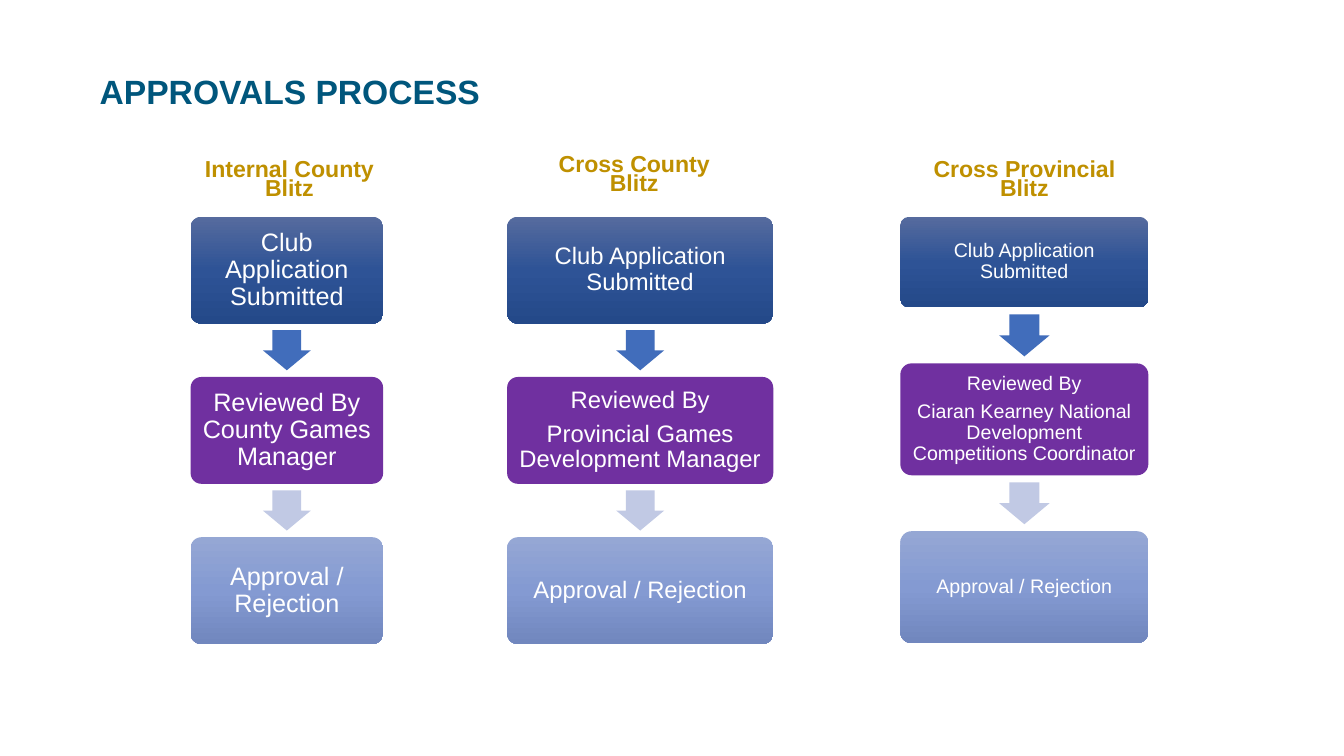
import copy
import pptx
import pptx.util
import pptx.dml.color
import pptx.enum.shapes
import pptx.enum.text
import pptx.oxml.ns

Inches, Pt = pptx.util.Inches, pptx.util.Pt
SHAPE = pptx.enum.shapes.MSO_SHAPE
ALIGN = pptx.enum.text.PP_ALIGN


def paint(color, value):
    color.rgb = pptx.dml.color.RGBColor.from_string(value)


def write(sp, paragraphs, size, color, bold=False, align=ALIGN.CENTER,
          spacing=0.9, insets=(0.1, 0.05, 0.1, 0.05)):
    tf = sp.text_frame
    tf.word_wrap = True
    tf.vertical_anchor = pptx.enum.text.MSO_ANCHOR.MIDDLE
    tf.margin_left, tf.margin_top, tf.margin_right, tf.margin_bottom = map(Inches, insets)
    for i, text in enumerate(paragraphs):
        p = tf.add_paragraph() if i else tf.paragraphs[0]
        p.alignment, p.line_spacing = align, spacing
        if i:
            p.space_before = Pt(0.35 * size)
        r = p.add_run()
        r.text = text
        r.font.name, r.font.size, r.font.bold = "Arial", Pt(size), bold
        paint(r.font.color, color)


prs = pptx.Presentation()
prs.slide_width, prs.slide_height = Inches(13.33), Inches(7.5)
s = prs.slides.add_slide(prs.slide_layouts[6])

# Title
title = s.shapes.add_textbox(Inches(0.89), Inches(0.52), Inches(11.72), Inches(0.81))
write(title, ["APPROVALS PROCESS"], 24, "00567C", bold=True, align=ALIGN.LEFT)

# Columns: heading, heading left and top, box left and width, box heights, size, reviewer
TOP = 2.15
columns = [
    ("Internal County Blitz", 1.75, 1.64, 1.89, 1.91, (1.06, 1.06, 1.06), 18,
     ["Reviewed By County Games Manager"]),
    ("Cross County Blitz", 5.17, 1.59, 5.03, 2.64, (1.06, 1.06, 1.06), 17,
     ["Reviewed By", "Provincial Games Development Manager"]),
    ("Cross Provincial Blitz", 9.04, 1.64, 8.93, 2.46, (0.9, 1.11, 1.11), 14,
     ["Reviewed By", "Ciaran Kearney National Development Competitions Coordinator"]),
]
box_fills = [("566B9E", "2E5396", "244989"), ("7030A0",), ("95A7D4", "849AD2", "7187BE")]
arrow_fills = ["416DBB", "C1C9E4"]

for heading, head_left, head_top, left, width, heights, size, reviewer in columns:
    tb = s.shapes.add_textbox(Inches(head_left), Inches(head_top), Inches(2.24), Inches(0.51))
    write(tb, [heading], 16.5, "BF9000", bold=True, spacing=0.7, insets=(0.16, 0, 0.16, 0.19))

    steps = [["Club Application Submitted"], reviewer, ["Approval / Rejection"]]
    gap = heights[-1] / 2
    y = TOP
    for i, (step, height, colors) in enumerate(zip(steps, heights, box_fills)):
        # Step box
        sp = s.shapes.add_shape(SHAPE.ROUNDED_RECTANGLE, Inches(left), Inches(y),
                                Inches(width), Inches(height))
        sp.adjustments[0] = 0.1
        sp.shadow.inherit = False
        sp.line.fill.background()
        if len(colors) == 1:
            sp.fill.solid()
            paint(sp.fill.fore_color, colors[0])
        else:
            sp.fill.gradient()
            sp.fill.gradient_angle = 270
            first = sp._element.spPr.find(".//" + pptx.oxml.ns.qn("a:gs"))
            first.addnext(copy.deepcopy(first))
            for n, (stop, value) in enumerate(zip(sp.fill.gradient_stops, colors)):
                stop.position = n / 2
                paint(stop.color, value)
        write(sp, step, size, "FFFFFF", insets=(0.06,) * 4)
        y += height

        # Arrow centred in the gap below
        if i < len(arrow_fills):
            w, h = 0.9 * gap, 0.75 * gap
            arrow = s.shapes.add_shape(SHAPE.DOWN_ARROW, Inches(left + (width - w) / 2),
                                       Inches(y + (gap - h) / 2), Inches(w), Inches(h))
            arrow.adjustments[0], arrow.adjustments[1] = 0.6, 0.5
            arrow.shadow.inherit = False
            arrow.line.fill.background()
            arrow.fill.solid()
            paint(arrow.fill.fore_color, arrow_fills[i])
        y += gap

prs.save("out.pptx")
